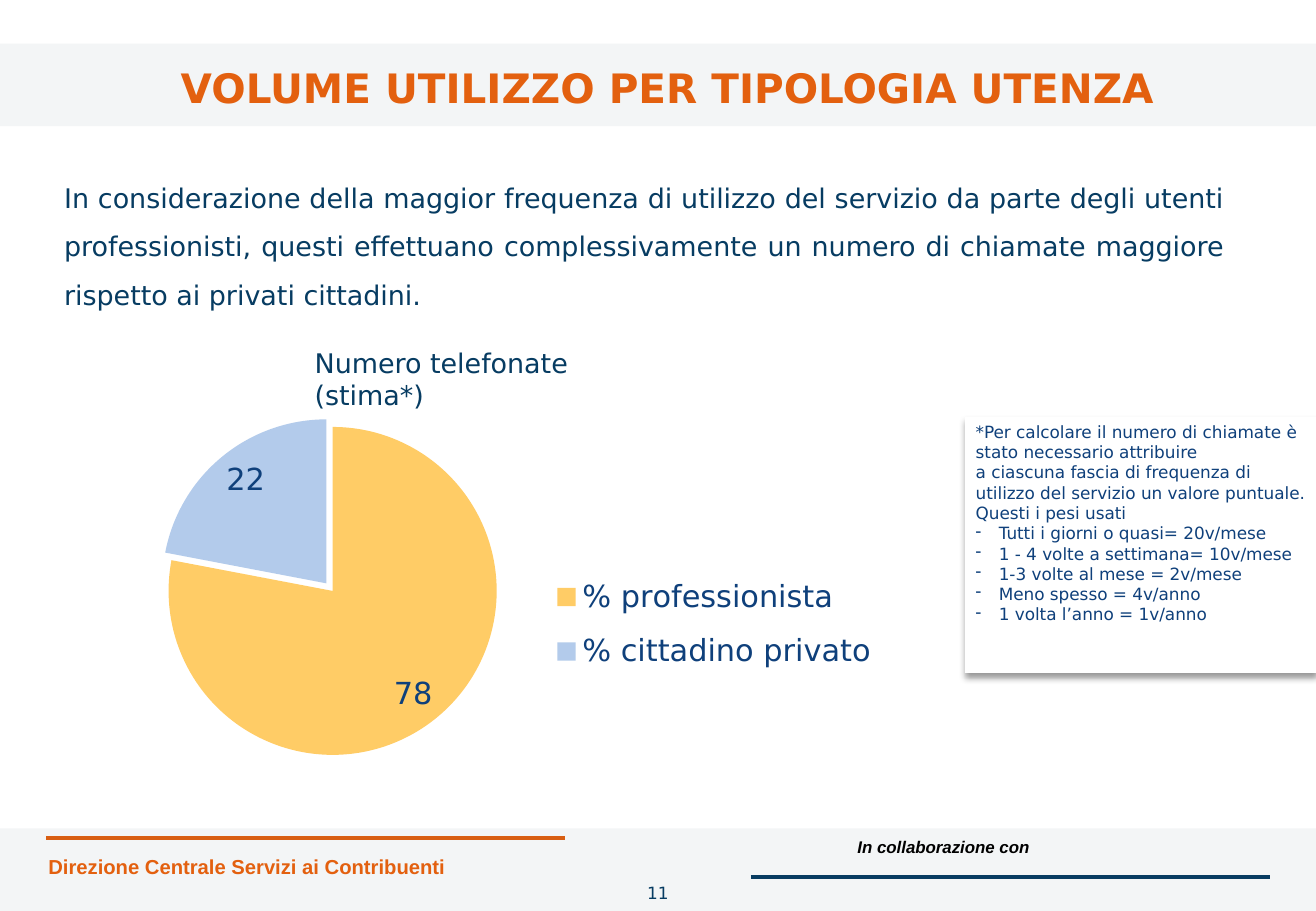
from lxml import etree
from pptx import Presentation
from pptx import util as u
from pptx.chart import data as chart_data
from pptx.dml.color import RGBColor
from pptx.enum import chart as charts, shapes, text
from pptx.oxml import ns, parse_xml

COLORS = {"orange": "E3600F", "navy": "073C62", "blue": "0F407B", "band": "1E3D5C",
          "black": "000000", "white": "FFFFFF", "yellow": "FFCC66", "sky": "B3CBEB"}
SANS, ARIAL = "DejaVu Sans", "Arial"
ALIGN = text.PP_ALIGN

deck = Presentation()
deck.slide_width, deck.slide_height = u.Inches(10.83), u.Inches(7.5)
page = deck.slides.add_slide(deck.slide_layouts[6])


def place(left, top, width, height):
    """Turn percentages of the slide's size into lengths."""
    across, down = deck.slide_width / 100, deck.slide_height / 100
    return [u.Emu(round(n)) for n in (left * across, top * down, width * across, height * down)]


def write(para, words, size, color, face=SANS, bold=False, italic=False):
    span = para.add_run()
    span.text = words
    font = span.font
    font.size, font.name, font.bold, font.italic = u.Pt(size), face, bold, italic
    font.color.rgb = RGBColor.from_string(COLORS[color])


# Footer rules
for left, top, color in ((3.51, 92, "orange"), (57.06, 96.27, "navy")):
    x, y, length, _ = place(left, top, 39.43, 0)
    rule = page.shapes.add_connector(shapes.MSO_CONNECTOR.STRAIGHT, x, y, x + length, y)
    rule.line.width = u.Pt(2)
    rule.line.color.rgb = RGBColor.from_string(COLORS[color])
    etree.SubElement(rule._element.spPr, ns.qn("a:effectLst"))

# Translucent footer and title bands
for top in (90.93, 4.8):
    band = page.shapes.add_shape(shapes.MSO_SHAPE.RECTANGLE, *place(0, top, 100, 9.07))
    band.shadow.inherit = False
    band.line.fill.background()
    band.fill.solid()
    band.fill.fore_color.rgb = RGBColor.from_string(COLORS["band"])
    tint = band._element.spPr.find(".//" + ns.qn("a:srgbClr"))
    etree.SubElement(tint, ns.qn("a:alpha"), val="5000")

# Pie chart
pie_data = chart_data.CategoryChartData(number_format="#,##0")
pie_data.categories = ["% professionista", "% cittadino privato"]
pie_data.add_series("Series 1", (78, 22))
chart = page.shapes.add_chart(charts.XL_CHART_TYPE.PIE, *place(9.33, 36.67, 57.99, 56.4),
                              pie_data).chart
chart.has_title = False
chart.font.size, chart.font.name = u.Pt(18), SANS
chart.font.color.rgb = RGBColor.from_string(COLORS["blue"])
chart.has_legend = True
chart.legend.position = charts.XL_LEGEND_POSITION.RIGHT
chart.legend.include_in_layout = False

pie = chart.plots[0]
pie.vary_by_categories = True
pie.has_data_labels = True
labels = pie.data_labels
labels.show_value, labels.show_percentage = True, False
labels.number_format, labels.number_format_is_linked = "#,##0", False
labels.position = charts.XL_LABEL_POSITION.INSIDE_END
labels.font.size, labels.font.name = u.Pt(18), SANS
labels.font.color.rgb = RGBColor.from_string(COLORS["blue"])
for index, color in enumerate(("yellow", "sky")):
    piece = pie.series[0].points[index].format
    piece.fill.solid()
    piece.fill.fore_color.rgb = RGBColor.from_string(COLORS[color])
    piece.line.fill.background()

# Pull the second slice out a little
slice_xml = pie.series[0]._element.findall(ns.qn("c:dPt"))[1]
pulled = etree.Element(ns.qn("c:explosion"), val="6")
slice_xml.find(ns.qn("c:spPr")).addprevious(pulled)

# Fixed places for pie and legend, as shares of the chart
plot_area = chart._chartSpace.chart.plotArea
legend = chart.legend._element
for owner, target, sizes in ((plot_area, "inner", (.06, .18, .43, .64)),
                             (legend, None, (.55, .44, .45, .25))):
    for old in owner.findall(ns.qn("c:layout")):
        owner.remove(old)
    layout = etree.Element(ns.qn("c:layout"))
    manual = etree.SubElement(layout, ns.qn("c:manualLayout"))
    if target:
        etree.SubElement(manual, ns.qn("c:layoutTarget"), val=target)
    for side in "xy":
        etree.SubElement(manual, ns.qn(f"c:{side}Mode"), val="edge")
    for side, share in zip("xywh", sizes):
        etree.SubElement(manual, ns.qn(f"c:{side}"), val=str(share))
    owner.insert(0 if target else 1, layout)

# Text boxes: place, words, size, colour, face, bold, italic, alignment, side and top margins
TEXTS = (
    ((60.48, 91.33, 18.93, 3.47), "In collaborazione con", 10, "black", ARIAL, True, True,
     ALIGN.RIGHT, .13, .04),
    ((3.51, 4.8, 94.37, 9.47), "VOLUME UTILIZZO PER TIPOLOGIA UTENZA", 24, "orange", SANS,
     True, False, ALIGN.CENTER, .1, .05),
    ((2.77, 93.07, 37.77, 4), "Direzione Centrale Servizi ai Contribuenti", 12, "orange", ARIAL,
     True, False, ALIGN.LEFT, .1, .05),
    ((45.61, 96.27, 8.77, 5.2), "11", 10, "navy", SANS, False, False, ALIGN.CENTER, .1, .05),
    ((3.97, 17.47, 90.03, 22.53),
     "In considerazione della maggior frequenza di utilizzo del servizio da parte degli utenti "
     "professionisti, questi effettuano complessivamente un numero di chiamate maggiore "
     "rispetto ai privati cittadini.", 16, "navy", SANS, False, False, ALIGN.JUSTIFY, .1, .05),
    ((23.08, 37.47, 23.27, 8.4), "Numero telefonate (stima*)", 16, "navy", SANS, False, False,
     ALIGN.LEFT, .09, .04),
)
for spot, words, size, color, face, bold, italic, align, side, edge in TEXTS:
    frame = page.shapes.add_textbox(*place(*spot)).text_frame
    frame.word_wrap = True
    frame.margin_left = frame.margin_right = u.Inches(side)
    frame.margin_top = frame.margin_bottom = u.Inches(edge)
    para = frame.paragraphs[0]
    para.alignment = align
    if align == ALIGN.JUSTIFY:
        para.line_spacing = 1.5
    if size == 24:
        frame.vertical_anchor = text.MSO_ANCHOR.MIDDLE
    write(para, words, size, color, face, bold, italic)

# Note on the weights, with a soft shadow below
note = page.shapes.add_shape(shapes.MSO_SHAPE.RECTANGLE, *place(73.31, 45.73, 26.78, 28.13))
note.fill.solid()
note.fill.fore_color.rgb = RGBColor.from_string(COLORS["white"])
note.line.fill.background()
note.shadow.inherit = False
note._element.spPr.find(ns.qn("a:effectLst")).append(parse_xml(
    f'<a:outerShdw {ns.nsdecls("a")} blurRad="{u.Pt(4)}" dist="{u.Pt(3)}" dir="5400000" '
    f'rotWithShape="0"><a:srgbClr val="{COLORS["black"]}"><a:alpha val="40000"/></a:srgbClr>'
    '</a:outerShdw>'))
frame = note.text_frame
frame.word_wrap = True
frame.vertical_anchor = text.MSO_ANCHOR.TOP
frame.margin_left = frame.margin_right = u.Inches(.09)
frame.margin_top = frame.margin_bottom = u.Inches(.04)
INTRO = ("*Per calcolare il numero di chiamate è stato necessario attribuire",
         "a ciascuna fascia di frequenza di utilizzo del servizio un valore puntuale.",
         "Questi i pesi usati")
WEIGHTS = ("Tutti i giorni o quasi= 20v/mese", "1 - 4 volte a settimana= 10v/mese",
           "1-3 volte al mese = 2v/mese", "Meno spesso = 4v/anno", "1 volta l’anno = 1v/anno")
for index, words in enumerate(INTRO + WEIGHTS):
    para = frame.add_paragraph() if index else frame.paragraphs[0]
    para.alignment = ALIGN.LEFT
    if words in WEIGHTS:
        props = para._p.get_or_add_pPr()
        props.set("marL", str(u.Inches(.19)))
        props.set("indent", str(-u.Inches(.19)))
        etree.SubElement(props, ns.qn("a:buChar"), char="-")
    write(para, words, 10, "blue")

deck.save("out.pptx")
